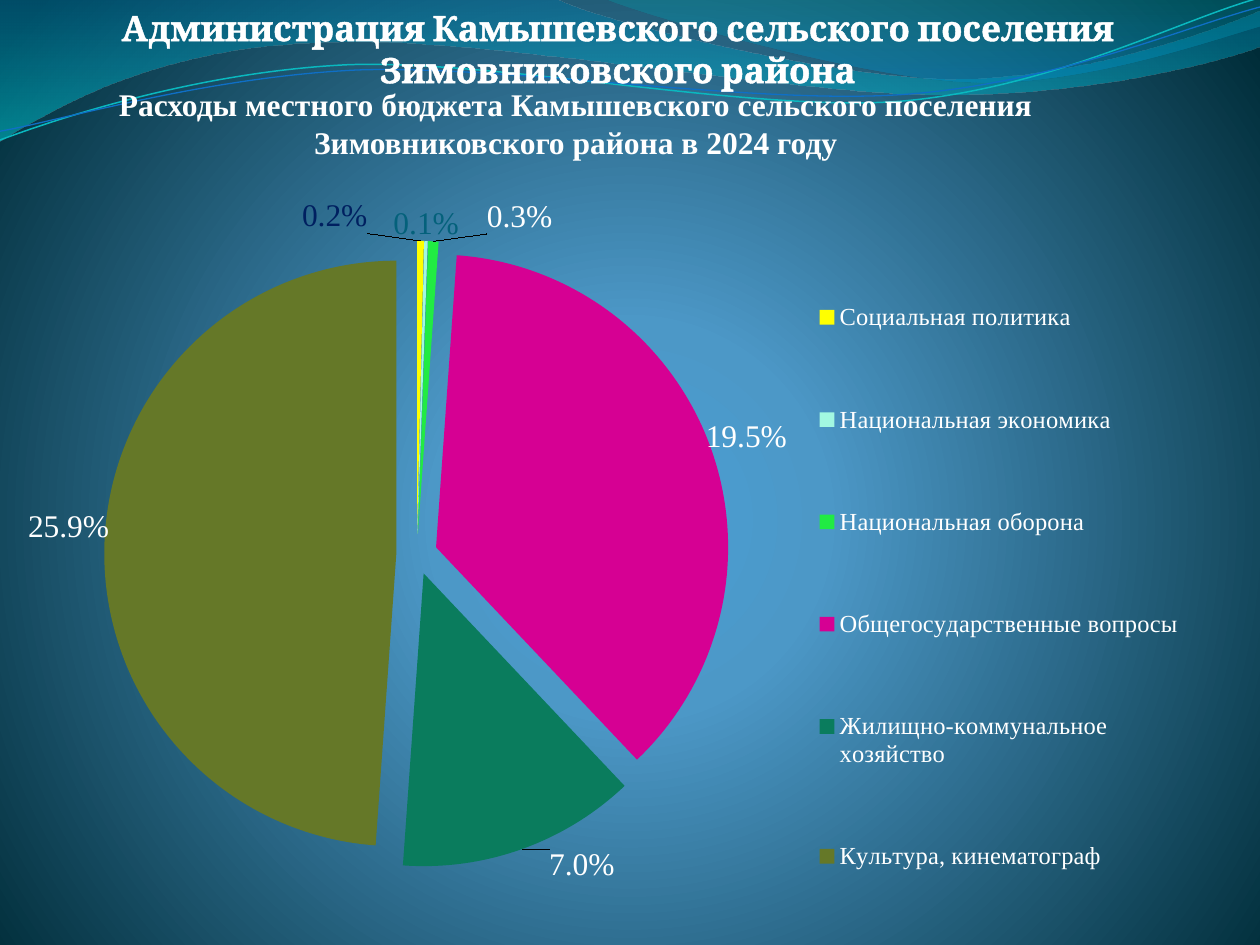
import lxml.etree
import pptx
import pptx.chart.data
import pptx.dml.color
import pptx.enum.chart
import pptx.enum.text
import pptx.oxml
import pptx.oxml.ns
import pptx.util

Pt = pptx.util.Pt
qn = pptx.oxml.ns.qn
WHITE = "FFFFFF"
SERIF = "Times New Roman"

# name, share, slice colour, label colour, label shift as a fraction of the chart
EXPENSES = [
    ("Социальная политика", 0.002, "FFFF00", "002060", (-0.07, 0)),
    ("Национальная экономика", 0.001, "A2F8E1", "04617B", (0, 0.01)),
    ("Национальная оборона", 0.003, "21EB43", WHITE, (0.07, 0)),
    ("Общегосударственные вопросы", 0.195, "D60093", WHITE, (-0.01, 0.01)),
    ("Жилищно-коммунальное хозяйство", 0.07, "0A7C5D", WHITE, (0.02, -0.01)),
    ("Культура, кинематограф", 0.259, "657828", WHITE, (0.01, -0.02)),
]

# Wave outlines in points: a start, then straight (2 numbers) or cubic (6) steps
UPPER_BAND = [(0, 0), (317, -1), (343, 12, 478, 45, 546, 45), (614, 45, 690, 19, 720, 6),
              (721, 26), (708, 32, 626, 55, 537, 54), (448, 54, 275, 20, 185, 24),
              (93, 26, 33, 60, -1, 81)]
RIGHT_BAND = [(345, -1), (366, 8, 491, 45, 554, 47), (616, 50, 692, 23, 720, 15), (720, 0)]
TEAL_WAVE = [(0, 80), (35, 67, 114, 41, 199, 37), (284, 34, 427, 64, 513, 58),
             (600, 51, 675, 11, 719, -1)]
BLUE_WAVE = [(0, 75), (34, 69, 118, 44, 204, 40), (290, 37, 430, 60, 516, 54),
             (602, 48, 678, 15, 720, 4)]


def rgb(color):
    return pptx.dml.color.RGBColor.from_string(color)


def set_font(font, size, color, name, bold=False):
    font.size, font.name, font.bold = Pt(size), name, bold
    font.color.rgb = rgb(color)


def set_gradient(fill, properties, stops, shade):
    """Fill with (position, colour, opacity) stops; shade is the direction XML."""
    fill.gradient()
    gradient = properties.find(qn("a:gradFill"))
    stop_xml = "".join(
        f'<a:gs pos="{position * 1000}"><a:srgbClr val="{color}">'
        f'<a:alpha val="{opacity * 1000}"/></a:srgbClr></a:gs>'
        for position, color, opacity in stops)
    gradient.getparent().replace(gradient, pptx.oxml.parse_xml(
        f'<a:gradFill {pptx.oxml.ns.nsdecls("a")} rotWithShape="1">'
        f"<a:gsLst>{stop_xml}</a:gsLst>{shade}</a:gradFill>"))


def add_outline(slide, outline, closed):
    """Draw through every control point, then turn each cubic step into a curve."""
    points = [step[i:i + 2] for step in outline for i in range(0, len(step), 2)]
    builder = slide.shapes.build_freeform(*points[0], scale=Pt(1))
    builder.add_line_segments(points[1:], close=closed)
    shape = builder.convert_to_shape()
    shape.shadow.inherit = False
    lines = iter(list(shape.element.iter(qn("a:lnTo"))))
    for step in outline[1:]:
        line = next(lines)
        if len(step) == 6:
            curve = lxml.etree.Element(qn("a:cubicBezTo"))
            line.addprevious(curve)
            for control in (line, next(lines), next(lines)):
                curve.append(control[0])
                control.getparent().remove(control)
    return shape


def add_band(slide, outline, stops):
    shape = add_outline(slide, outline, True)
    shape.line.fill.background()
    set_gradient(shape.fill, shape.element.spPr, stops, '<a:lin ang="5400000" scaled="0"/>')


def add_wave(slide, outline, color, width):
    shape = add_outline(slide, outline, False)
    shape.fill.background()
    shape.line.color.rgb = rgb(color)
    shape.line.width = Pt(width)


def add_backdrop(slide):
    fill = slide.background.fill
    fill.gradient()
    properties = slide.element.find(".//" + qn("p:bgPr"))
    set_gradient(fill, properties,
                 [(0, "4AA0D6", 100), (25, "4C98C7", 100), (100, "002C38", 100)],
                 '<a:path path="circle"><a:fillToRect l="10000" t="110000" '
                 'r="10000" b="100000"/></a:path>')
    add_band(slide, UPPER_BAND, [(0, "0074A1", 45), (100, "00C6CF", 55)])
    add_band(slide, RIGHT_BAND, [(0, "00A1A9", 30), (80, "008BBF", 45)])
    add_wave(slide, TEAL_WAVE, "0AB8BF", 0.85)
    add_wave(slide, BLUE_WAVE, "0F6FC6", 0.75)


def place_layout(parent, index, **settings):
    old_layout = parent.find(qn("c:layout"))
    if old_layout is not None:
        parent.remove(old_layout)
    parts = "".join(f'<c:{key} val="{value}"/>' for key, value in settings.items())
    parent.insert(index, pptx.oxml.parse_xml(
        f'<c:layout {pptx.oxml.ns.nsdecls("c")}>'
        f"<c:manualLayout>{parts}</c:manualLayout></c:layout>"))


def style_slices(chart):
    series = chart.plots[0].series[0]
    explosion = lxml.etree.Element(qn("c:explosion"), val="7")
    chart.element.find(".//" + qn("c:ser")).find(qn("c:tx")).addnext(explosion)
    outside = pptx.enum.chart.XL_LABEL_POSITION.OUTSIDE_END
    labels = series.data_labels
    labels.show_value = True
    labels.number_format, labels.number_format_is_linked = "0.0%", False
    labels.position = outside
    set_font(labels.font, 18, WHITE, SERIF)
    for index, (_, _, color, label_color, _) in enumerate(EXPENSES):
        point = series.points[index]
        point.format.fill.solid()
        point.format.fill.fore_color.rgb = rgb(color)
        point.format.line.fill.background()
        set_font(point.data_label.font, 18, label_color, SERIF)
        point.data_label.position = outside
    for label, expense in zip(chart.element.iter(qn("c:dLbl")), EXPENSES):
        place_layout(label, 1, x=expense[4][0], y=expense[4][1])
        label.find(".//" + qn("a:bodyPr")).set("wrap", "none")


def add_expense_chart(slide, box):
    data = pptx.chart.data.CategoryChartData(number_format="0.0%")
    data.categories = [expense[0] for expense in EXPENSES]
    data.add_series("Series 1", [expense[1] for expense in EXPENSES])
    chart = slide.shapes.add_chart(pptx.enum.chart.XL_CHART_TYPE.PIE,
                                   *map(Pt, box), data).chart
    set_font(chart.font, 10, WHITE, "Cambria")
    chart.has_title = False
    chart.has_legend = True
    chart.legend.position = pptx.enum.chart.XL_LEGEND_POSITION.RIGHT
    chart.legend.include_in_layout = False
    set_font(chart.legend.font, 14, WHITE, SERIF)
    place_layout(chart.element.find(".//" + qn("c:legend")), 1, xMode="edge",
                 yMode="edge", x=0.645, y=0.07, w=0.31, h=0.93)
    place_layout(chart.element.find(".//" + qn("c:plotArea")), 0, layoutTarget="inner",
                 xMode="edge", yMode="edge", x=0.07, y=0.08, w=0.51, h=0.825)
    chart.plots[0].vary_by_categories = True
    style_slices(chart)


def add_heading(slide, box, text, size, font_name):
    frame = slide.shapes.add_textbox(*map(Pt, box)).text_frame
    frame.word_wrap = True
    paragraph = frame.paragraphs[0]
    paragraph.text = text
    paragraph.alignment = pptx.enum.text.PP_ALIGN.CENTER
    set_font(paragraph.font, size, WHITE, font_name, bold=True)
    return paragraph


def outline_text(paragraph, color, width):
    properties = paragraph.runs[0].font._element
    properties.insert(0, pptx.oxml.parse_xml(
        f'<a:ln {pptx.oxml.ns.nsdecls("a")} w="{Pt(width)}"><a:solidFill>'
        f'<a:srgbClr val="{color}"/></a:solidFill></a:ln>'))


def main():
    presentation = pptx.Presentation()
    presentation.slide_width, presentation.slide_height = Pt(720), Pt(540)
    slide = presentation.slides.add_slide(presentation.slide_layouts[6])
    add_backdrop(slide)
    add_expense_chart(slide, (9, 100, 702, 440))
    add_heading(slide, (0, 45, 658, 75),
                "Расходы местного бюджета Камышевского сельского поселения "
                "Зимовниковского района в 2024 году", 18, SERIF)
    title = add_heading(slide, (54, 0, 598, 55),
                        "Администрация Камышевского сельского поселения "
                        "Зимовниковского района", 20, "Cambria")
    outline_text(title, WHITE, 1.45)
    presentation.save("out.pptx")


if __name__ == "__main__":
    main()
